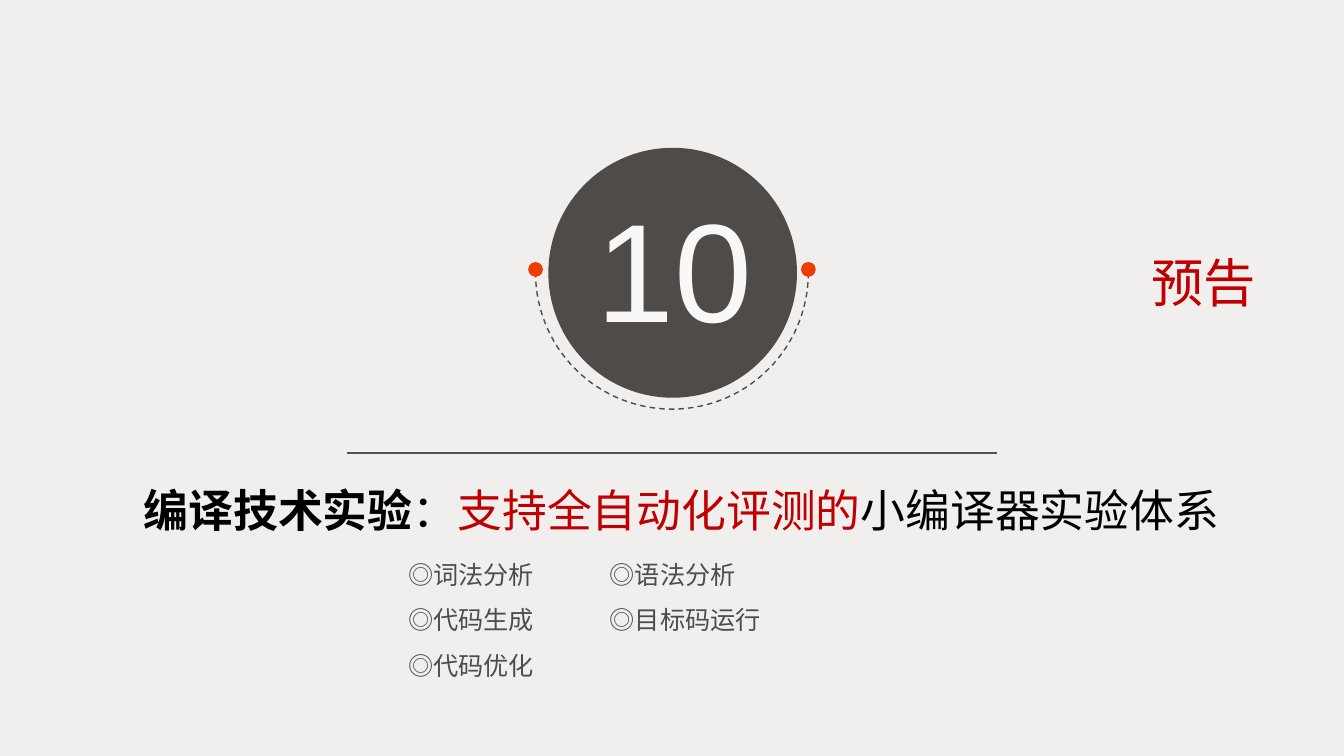
import math
from lxml import etree
from pptx import Presentation
from pptx.dml.color import RGBColor
from pptx.enum import dml, shapes, text
from pptx.oxml import ns
from pptx.util import Inches, Pt

BACKGROUND = RGBColor(0xF0, 0xEF, 0xED)
DARK = RGBColor(0x4E, 0x4B, 0x49)
ORANGE = RGBColor(0xEB, 0x3D, 0x00)
WHITE = RGBColor(0xF8, 0xF8, 0xF8)
RULE = RGBColor(0x44, 0x54, 0x6A)
RED = RGBColor(0xC0, 0x00, 0x00)
BLACK = RGBColor(0x00, 0x00, 0x00)
GREY = RGBColor(0x4D, 0x4D, 0x4D)
CJK = "Noto Sans CJK SC"

# A 16:9 slide
presentation = Presentation()
presentation.slide_width = Inches(10)
presentation.slide_height = Inches(10) * 9 // 16
slide = presentation.slides.add_slide(presentation.slide_layouts[6])
slide.background.fill.solid()
slide.background.fill.fore_color.rgb = BACKGROUND


def add_circle(left, top, width, height, color):
    circle = slide.shapes.add_shape(
        shapes.MSO_SHAPE.OVAL, Inches(left), Inches(top), Inches(width), Inches(height))
    circle.shadow.inherit = False
    circle.fill.solid()
    circle.fill.fore_color.rgb = color
    circle.line.fill.background()


def add_text(left, top, width, height, paragraphs, size, font=CJK, wrap=True):
    """Add a text box; each paragraph is a list of (text, color, bold) runs."""
    box = slide.shapes.add_textbox(Inches(left), Inches(top), Inches(width), Inches(height))
    frame = box.text_frame
    frame.word_wrap = wrap
    frame.auto_size = text.MSO_AUTO_SIZE.SHAPE_TO_FIT_TEXT
    frame.margin_left = frame.margin_right = Inches(0.1)
    frame.margin_top = frame.margin_bottom = Inches(0.05)
    for index, runs in enumerate(paragraphs):
        paragraph = frame.add_paragraph() if index else frame.paragraphs[0]
        for words, color, bold in runs:
            run = paragraph.add_run()
            run.text = words
            run.font.size, run.font.bold, run.font.name = Pt(size), bold, font
            run.font.color.rgb = color
            east_asian = etree.SubElement(run.font._element, ns.qn("a:ea"))
            east_asian.set("typeface", font)
    return frame


# Numbered badge with a dashed half circle below it
add_circle(4.08, 1.1, 1.85, 1.86, DARK)
center_x, center_y, radius = 5, 2.03, 2.03 / 2
arc_points = [
    (Inches(center_x + radius * math.cos(math.radians(angle))),
     Inches(center_y + radius * math.sin(math.radians(angle))))
    for angle in range(0, 181, 3)]
builder = slide.shapes.build_freeform(*arc_points[0])
builder.add_line_segments(arc_points[1:], close=False)
arc = builder.convert_to_shape()
arc.shadow.inherit = False
arc.fill.background()
arc.line.color.rgb = DARK
arc.line.width = Pt(0)
arc.line.dash_style = dml.MSO_LINE.DASH
for dot_left in (5.96, 3.93):
    add_circle(dot_left, 1.95, 0.11, 0.11, ORANGE)
add_text(4.34, 1.31, 1.37, 1.36, [[("10", WHITE, False)]], 75, "Arial", wrap=False)

# Title under a rule
rule = slide.shapes.add_connector(
    shapes.MSO_CONNECTOR.STRAIGHT, Inches(2.58), Inches(3.37), Inches(7.42), Inches(3.37))
rule.line.color.rgb = RULE
rule.line.width = Pt(0.75)
etree.SubElement(rule._element.spPr, ns.qn("a:effectLst"))
title = add_text(0.86, 3.54, 8.42, 0.5, [[
    ("编译技术实验", BLACK, True),
    ("：", BLACK, False),
    ("支持全自动化评测的", RED, False),
    ("小编译器实验体系", BLACK, False),
]], 24)
title.paragraphs[0].alignment = text.PP_ALIGN.CENTER

# Topics in two tabbed columns
topics = ["◎词法分析\t◎语法分析", "◎代码生成\t◎目标码运行", "◎代码优化"]
topic_frame = add_text(2.94, 4, 4.67, 1.12, [[(topic, GREY, False)] for topic in topics], 13.5)
for paragraph in topic_frame.paragraphs:
    paragraph.line_spacing = 1.5
    tab_list = etree.SubElement(paragraph._p.get_or_add_pPr(), ns.qn("a:tabLst"))
    etree.SubElement(tab_list, ns.qn("a:tab"), pos=str(Inches(1.5)), algn="l")

add_text(8.47, 1.81, 1.24, 0.57, [[("预告", RED, False)]], 28)

presentation.save("out.pptx")
